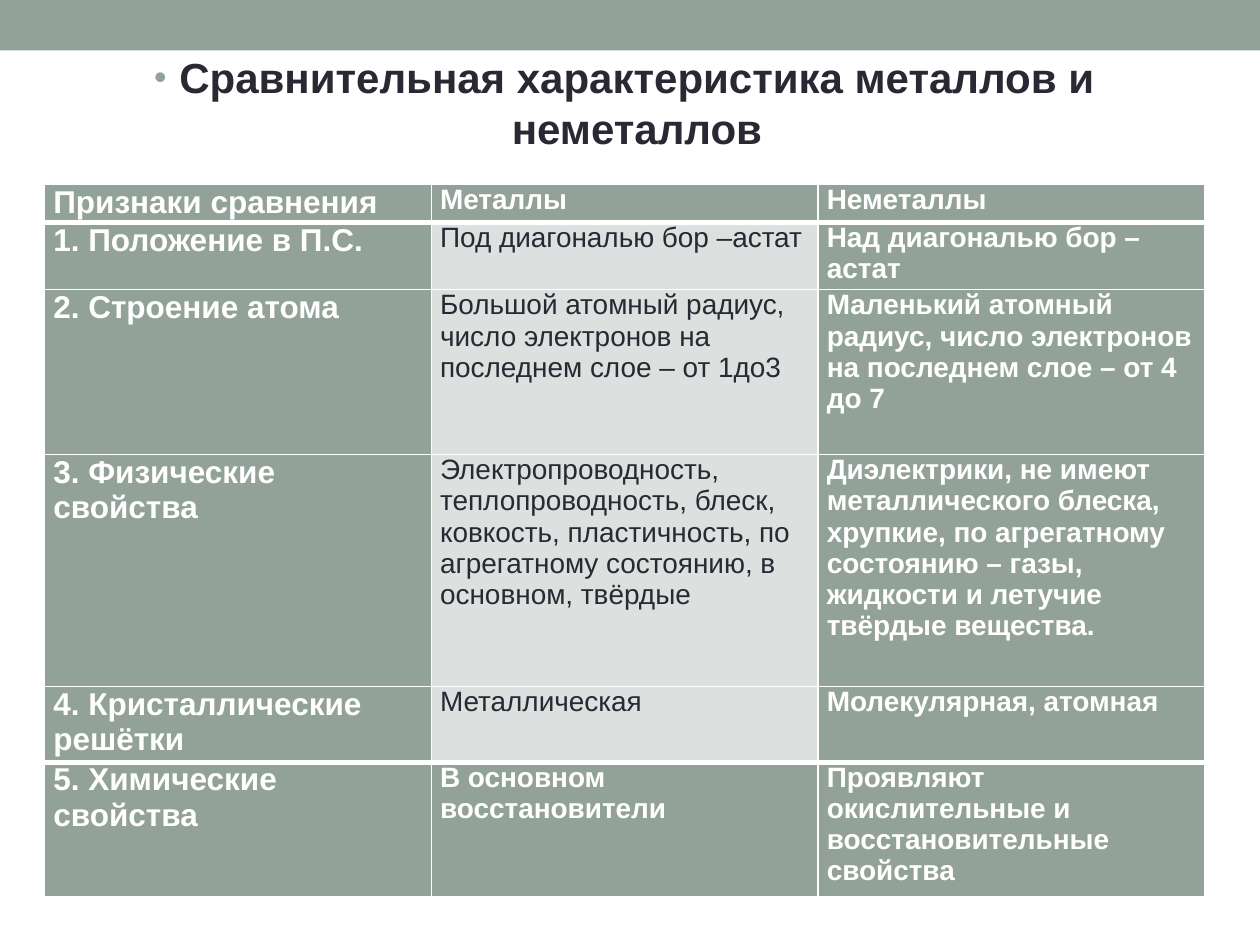
from lxml.etree import SubElement
from pptx import Presentation
from pptx.dml.color import RGBColor
from pptx.enum.shapes import MSO_SHAPE
from pptx.enum.text import PP_ALIGN
from pptx.oxml.ns import qn
from pptx.util import Pt

COLORS = {"sage": "93A299", "pale": "DCE0DE", "dark": "292934", "white": "FFFFFF"}
FONT = "Arial"
TITLE = "Сравнительная характеристика металлов и неметаллов"
ROWS = [
    ("Признаки сравнения", "Металлы", "Неметаллы"),
    ("1. Положение в П.С.", "Под диагональю бор –астат", "Над диагональю бор –астат"),
    ("2. Строение атома",
     "Большой атомный радиус, число электронов на последнем слое – от 1до3",
     "Маленький атомный радиус, число электронов на последнем слое – от 4 до 7"),
    ("3. Физические свойства",
     "Электропроводность, теплопроводность, блеск, ковкость, пластичность, "
     "по агрегатному состоянию, в основном, твёрдые",
     "Диэлектрики, не имеют металлического блеска, хрупкие, по агрегатному "
     "состоянию – газы, жидкости и летучие твёрдые вещества."),
    ("4. Кристаллические решётки", "Металлическая", "Молекулярная, атомная"),
    ("5. Химические свойства", "В основном восстановители",
     "Проявляют окислительные и восстановительные свойства"),
]
ROW_HEIGHTS = [18.7, 38.2, 94.3, 132.5, 38.2, 75.6]
COLUMN_WIDTH = 221


def color(name):
    return RGBColor.from_string(COLORS[name])


def style_text(para, size, color_name, bold):
    for span in para.runs:
        span.font.name = FONT
        span.font.size = Pt(size)
        span.font.bold = bold
        span.font.color.rgb = color(color_name)


def add_band(page):
    band = page.shapes.add_shape(MSO_SHAPE.RECTANGLE, 0, 0, Pt(720), Pt(28.8))
    band.shadow.inherit = False
    band.fill.solid()
    band.fill.fore_color.rgb = color("sage")
    band.line.fill.background()


def add_bullet(para, color_name, percent, indent):
    properties = para._p.get_or_add_pPr()
    properties.set("marL", str(Pt(indent)))
    properties.set("indent", str(-Pt(indent)))
    bullet_color = SubElement(properties, qn("a:buClr"))
    SubElement(bullet_color, qn("a:srgbClr"), val=COLORS[color_name])
    SubElement(properties, qn("a:buSzPct"), val=str(percent * 1000))
    SubElement(properties, qn("a:buFont"), typeface=FONT)
    SubElement(properties, qn("a:buChar"), char="•")


def add_title(page):
    box = page.shapes.add_textbox(Pt(36), Pt(26), Pt(641.5), Pt(484))
    box.text_frame.word_wrap = True
    box.text_frame.text = TITLE
    para = box.text_frame.paragraphs[0]
    para.alignment = PP_ALIGN.CENTER
    para.space_before = Pt(4.8)
    add_bullet(para, "sage", 85, 14.4)
    style_text(para, 24, "dark", True)


def set_borders(cell, top=1, bottom=1):
    properties = cell._tc.get_or_add_tcPr()
    for side, width in (("L", 1), ("R", 1), ("T", top), ("B", bottom)):
        line = SubElement(properties, qn(f"a:ln{side}"), w=str(Pt(width)))
        fill = SubElement(line, qn("a:solidFill"))
        SubElement(fill, qn("a:srgbClr"), val=COLORS["white"])


def fill_cell(cell, text, row, column):
    last = len(ROWS) - 1
    plain = column == 1 and 0 < row < last
    set_borders(cell, top=3 if row == last else 1, bottom=3 if row == 0 else 1)
    cell.margin_left = cell.margin_right = Pt(5)
    cell.margin_top = cell.margin_bottom = 0
    cell.fill.solid()
    cell.fill.fore_color.rgb = color("pale" if plain else "sage")
    cell.text_frame.text = text
    style_text(cell.text_frame.paragraphs[0], 18 if column == 0 else 16,
               "dark" if plain else "white", not plain)


def add_comparison(page):
    columns = len(ROWS[0])
    frame = page.shapes.add_table(len(ROWS), columns, Pt(25.5), Pt(105.5),
                                  Pt(COLUMN_WIDTH * columns), Pt(sum(ROW_HEIGHTS)))
    table = frame.table
    for column in table.columns:
        column.width = Pt(COLUMN_WIDTH)
    for row, (texts, height) in enumerate(zip(ROWS, ROW_HEIGHTS)):
        table.rows[row].height = Pt(height)
        for column, text in enumerate(texts):
            fill_cell(table.cell(row, column), text, row, column)


def main():
    deck = Presentation()
    deck.slide_width, deck.slide_height = Pt(720), Pt(540)
    page = deck.slides.add_slide(deck.slide_layouts[6])
    # Header band and heading
    add_band(page)
    add_title(page)
    # Metals against non-metals
    add_comparison(page)
    deck.save("out.pptx")


if __name__ == "__main__":
    main()
